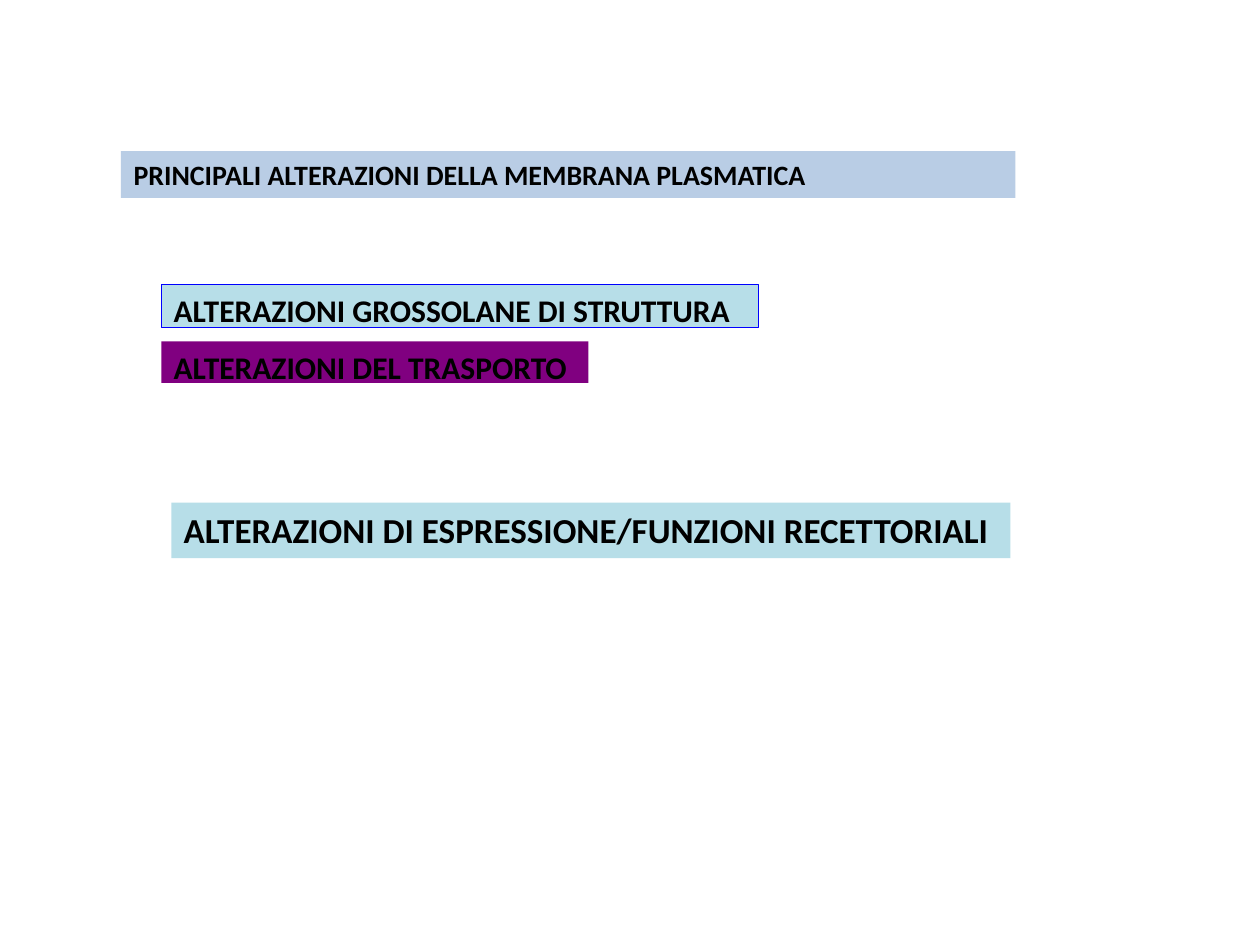
from dataclasses import dataclass
from typing import Optional

from pptx import Presentation
from pptx.dml.color import RGBColor
from pptx.enum import shapes, text
from pptx.util import Inches, Pt

COLORS = {
    "title": "B9CDE5",
    "topic": "B7DEE8",
    "transport": "800080",
    "outline": "0000FF",
    "text": "000000",
}


@dataclass
class Banner:
    wording: str
    left: float
    top: float
    width: float
    height: float
    size: int
    fill: str
    outline: Optional[str] = None


TITLE = Banner("PRINCIPALI ALTERAZIONI DELLA MEMBRANA PLASMATICA",
               0.96, 1.2, 7.1, 0.37, 16, "title")
TOPICS = [
    Banner("ALTERAZIONI GROSSOLANE DI STRUTTURA",
           1.28, 2.26, 4.74, 0.34, 18, "topic", "outline"),
    Banner("ALTERAZIONI DEL TRASPORTO",
           1.28, 2.71, 3.39, 0.33, 18, "transport"),
    Banner("ALTERAZIONI DI ESPRESSIONE/FUNZIONI RECETTORIALI",
           1.36, 3.99, 6.66, 0.44, 20, "topic"),
]


def color(name: str) -> RGBColor:
    return RGBColor.from_string(COLORS[name])


def format_banner(shape, banner: Banner) -> None:
    shape.left, shape.top = Inches(banner.left), Inches(banner.top)
    shape.width, shape.height = Inches(banner.width), Inches(banner.height)
    shape.fill.solid()
    shape.fill.fore_color.rgb = color(banner.fill)
    if banner.outline:
        shape.line.color.rgb = color(banner.outline)
        shape.line.width = Pt(0.75)
    else:
        shape.line.fill.background()

    frame = shape.text_frame
    frame.text = banner.wording
    frame.word_wrap = True
    frame.auto_size = text.MSO_AUTO_SIZE.NONE
    frame.vertical_anchor = text.MSO_ANCHOR.TOP
    paragraph = frame.paragraphs[0]
    paragraph.alignment = text.PP_ALIGN.LEFT
    paragraph.font.name = "Calibri"
    paragraph.font.size = Pt(banner.size)
    paragraph.font.bold = True
    paragraph.font.color.rgb = color("text")


def add_topic(slide, banner: Banner) -> None:
    shape = slide.shapes.add_shape(
        shapes.MSO_SHAPE.RECTANGLE, Inches(banner.left), Inches(banner.top),
        Inches(banner.width), Inches(banner.height))
    shape.shadow.inherit = False
    format_banner(shape, banner)


def main() -> None:
    presentation = Presentation()
    presentation.slide_width = Inches(10)
    presentation.slide_height = Inches(7.5)
    slide = presentation.slides.add_slide(
        presentation.slide_layouts.get_by_name("Title Only"))
    format_banner(slide.shapes.title, TITLE)
    for topic in TOPICS:
        add_topic(slide, topic)
    presentation.save("out.pptx")


if __name__ == "__main__":
    main()
